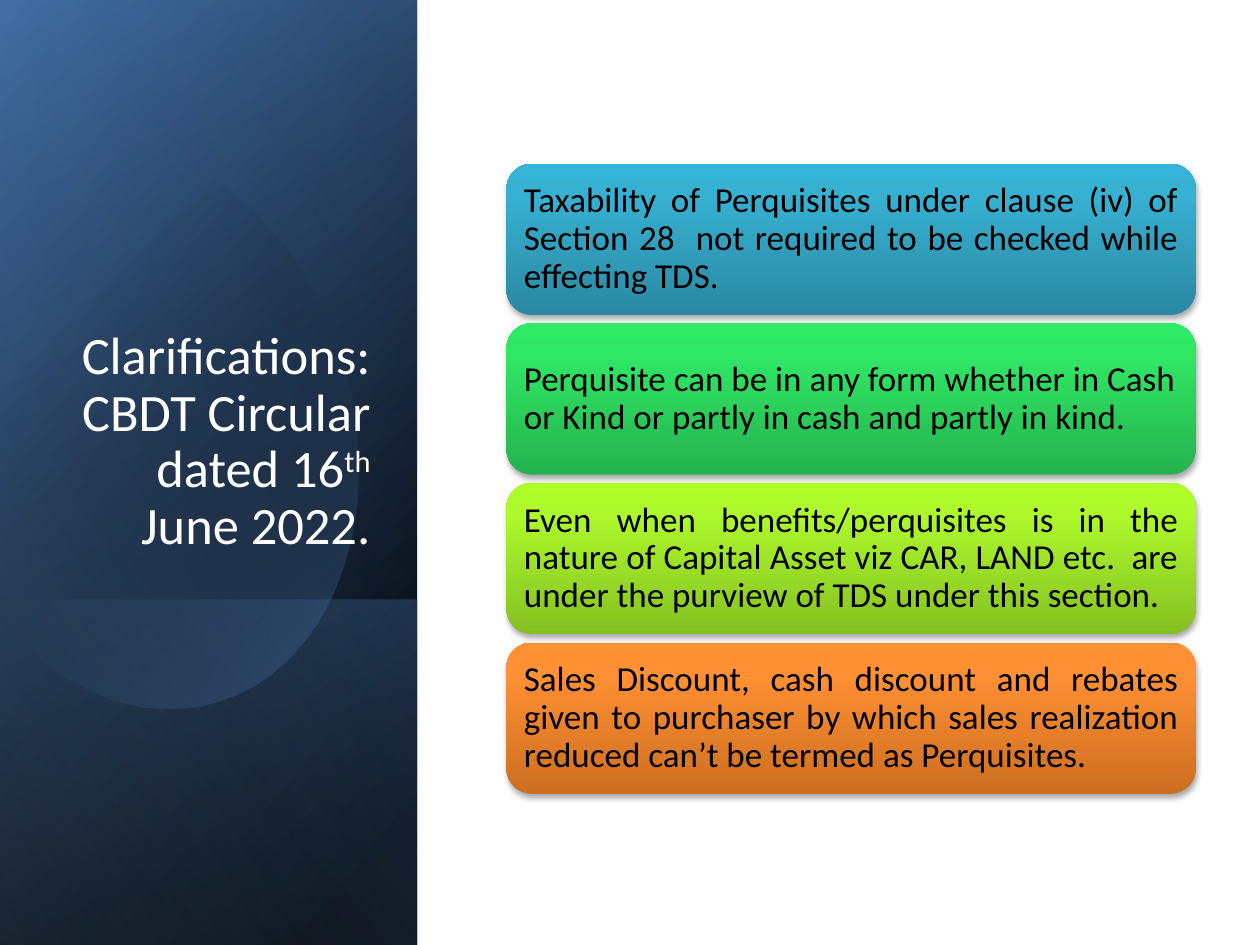
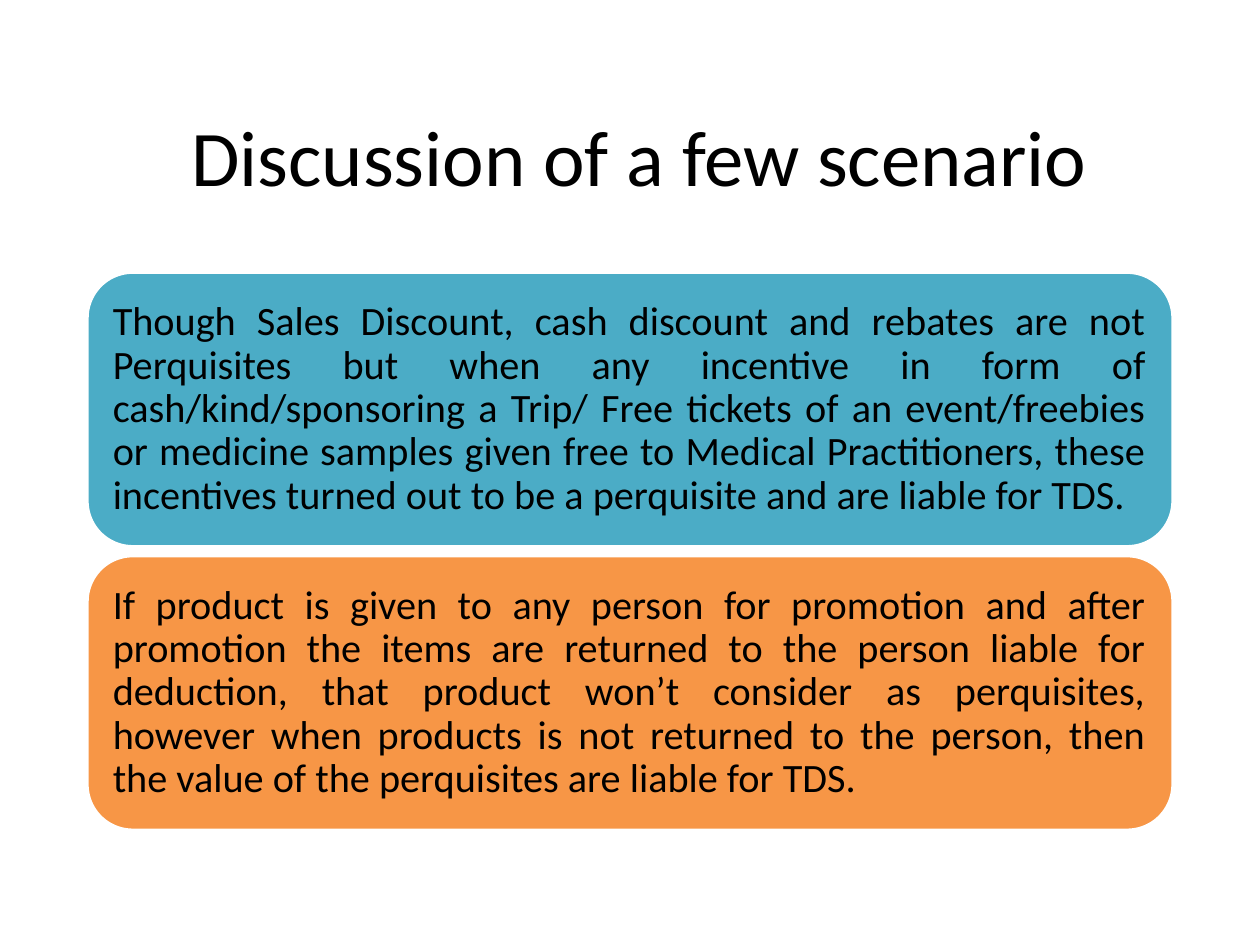
import dataclasses

import lxml.etree
import pptx
import pptx.dml.color
import pptx.enum.shapes
import pptx.enum.text
import pptx.oxml.ns
import pptx.util

ALIGN = pptx.enum.text.PP_ALIGN
ANCHOR = pptx.enum.text.MSO_ANCHOR
SHAPES = pptx.enum.shapes.MSO_SHAPE
qn = pptx.oxml.ns.qn

# The slide is a grid of 100 columns by 75 rows
CELL = pptx.util.Inches(0.1)


@dataclasses.dataclass(frozen=True)
class Theme:
    font: str = "Calibri"
    black: str = "000000"
    white: str = "FFFFFF"
    navy: str = "376092"
    blue: str = "4F81BD"
    pale_blue: str = "95B3D7"
    teal: str = "4BACC6"
    orange: str = "F79646"
    side_title_size: int = 30
    title_size: int = 45
    card_size: int = 20
    scenario_size: int = 23
    line_spacing: float = 0.9
    # Dark, middle and light tone of each clarification card
    card_tones: tuple = (
        ("2A88A2", "37B1D2", "34B4D6"),
        ("25B24E", "30E765", "2DEB64"),
        ("85C022", "ADF92C", "AFFE28"),
        ("CC6E20", "FF9034", "FF9136"),
    )


THEME = Theme()


@dataclasses.dataclass(frozen=True)
class Box:
    left: float
    top: float
    width: float
    height: float

    def emu(self):
        return [round(value * CELL) for value in dataclasses.astuple(self)]

    def inner(self, left, top, width, height):
        return Box(self.left + left, self.top + top, width, height)

    def rows(self, count, gap):
        height = (self.height - gap * (count - 1)) / count
        return [self.inner(0, i * (height + gap), self.width, height) for i in range(count)]


# Fills, effects and text
def add_color(parent, color, alpha):
    element = lxml.etree.SubElement(parent, qn("a:srgbClr"), val=color)
    if alpha < 100:
        lxml.etree.SubElement(element, qn("a:alpha"), val=str(alpha * 1000))


def set_gradient(shape, stops, angle):
    """Stops are (position, colour, opacity) in percent; the angle runs clockwise."""
    shape.fill.background()
    properties = shape._element.spPr
    gradient = lxml.etree.Element(qn("a:gradFill"), rotWithShape="1")
    stop_list = lxml.etree.SubElement(gradient, qn("a:gsLst"))
    for position, color, alpha in stops:
        stop = lxml.etree.SubElement(stop_list, qn("a:gs"), pos=str(position * 1000))
        add_color(stop, color, alpha)
    lxml.etree.SubElement(gradient, qn("a:lin"), ang=str(angle * 60000), scaled="0")
    properties.replace(properties.find(qn("a:noFill")), gradient)


def set_shadow(shape):
    effects = shape._element.spPr.find(qn("a:effectLst"))
    shadow = lxml.etree.SubElement(
        effects, qn("a:outerShdw"), blurRad=str(pptx.util.Pt(3.1)),
        dist=str(pptx.util.Pt(1.8)), dir="5400000", rotWithShape="0")
    add_color(shadow, THEME.black, 35)


def make_plain(shape):
    shape.shadow.inherit = False
    shape.line.fill.background()


def style_text(text_frame, size, color, align, anchor, spacing=1.0):
    text_frame.word_wrap = True
    text_frame.vertical_anchor = anchor
    for paragraph in text_frame.paragraphs:
        paragraph.alignment = align
        paragraph.line_spacing = spacing
        for run in paragraph.runs:
            run.font.name = THEME.font
            run.font.size = pptx.util.Pt(size)
            run.font.color.rgb = pptx.dml.color.RGBColor.from_string(color)


def add_card(slide, box, text, size, inset, align):
    card = slide.shapes.add_shape(SHAPES.ROUNDED_RECTANGLE, *box.emu())
    make_plain(card)
    frame = card.text_frame
    frame.margin_left = frame.margin_right = pptx.util.Inches(inset)
    frame.margin_top = frame.margin_bottom = pptx.util.Inches(inset)
    frame.text = text
    style_text(frame, size, THEME.black, align, ANCHOR.MIDDLE, THEME.line_spacing)
    return card


# Side panel: layered gradients and a soft blob
def add_layer(slide, box, stops, angle):
    """Fill the box with a mirrored rectangle turned a quarter."""
    turned = box.inner((box.width - box.height) / 2, (box.height - box.width) / 2,
                       box.height, box.width)
    layer = slide.shapes.add_shape(SHAPES.RECTANGLE, *turned.emu())
    make_plain(layer)
    layer.rotation = 90
    layer._element.spPr.xfrm.set("flipH", "1")
    set_gradient(layer, stops, angle)


def curve_points(start, control_1, control_2, end, steps=16):
    for step in range(1, steps + 1):
        t = step / steps
        weights = ((1 - t) ** 3, 3 * t * (1 - t) ** 2, 3 * t * t * (1 - t), t ** 3)
        yield tuple(sum(w * point[axis] for w, point in
                        zip(weights, (start, control_1, control_2, end)))
                    for axis in (0, 1))


def add_blob(slide, box):
    start = (9.6, 11.4)
    right_side = [((17.1, 12.2), (24.4, 19.2), (27.3, 29)),
                  ((30.7, 41.2), (26.2, 53.1), (17.1, 55.7)),
                  ((11.4, 57.4), (5.3, 55), (0.7, 50))]
    left_edge = [(-0.3, 48.8), (-2.5, 16.6), (-1.5, 15.4)]
    top_left = [((0.2, 13.7), (2.2, 12.5), (4.5, 11.8)),
                ((6.2, 11.3), (7.9, 11.2), start)]
    points = [start]
    for curve in right_side:
        points.extend(curve_points(points[-1], *curve))
    points.extend(left_edge)
    for curve in top_left:
        points.extend(curve_points(points[-1], *curve))
    corners = [(round((box.left + x) * CELL), round((box.top + y) * CELL)) for x, y in points]
    builder = slide.shapes.build_freeform(*corners[0])
    builder.add_line_segments(corners[1:], close=True)
    blob = builder.convert_to_shape()
    make_plain(blob)
    set_gradient(blob, [(29, THEME.black, 0), (100, THEME.blue, 43)], 45)


def add_side_panel(slide, box):
    add_layer(slide, box, [(8, THEME.black, 100), (100, THEME.navy, 100)], 50)
    add_layer(slide, box, [(0, THEME.black, 0), (99, THEME.blue, 46)], 30)
    foot = box.inner(0, 47.6, box.width, box.height - 47.6)
    add_layer(slide, foot, [(2, THEME.blue, 29), (100, THEME.black, 30)], 130)
    add_blob(slide, box)
    add_layer(slide, box, [(0, THEME.black, 0), (99, THEME.pale_blue, 11)], 120)

    title = slide.shapes.add_textbox(*box.inner(4.8, 18.4, 25.6, 26.2).emu())
    paragraph = title.text_frame.paragraphs[0]
    paragraph.text = " Clarifications:\vCBDT Circular dated 16"
    ordinal = paragraph.add_run()
    ordinal.text = "th"
    ordinal.font._element.set("baseline", "30000")
    paragraph.add_run().text = " June 2022."
    style_text(title.text_frame, THEME.side_title_size, THEME.white, ALIGN.RIGHT,
               ANCHOR.BOTTOM, THEME.line_spacing)


# Card stacks
def add_clarifications(slide, box):
    clarifications = [
        ("Taxability of Perquisites under clause (iv) of Section 28  not required to be "
         "checked while effecting TDS.", ALIGN.JUSTIFY),
        ("Perquisite can be in any form whether in Cash or Kind or partly in cash and "
         "partly in kind.", ALIGN.LEFT),
        ("Even when benefits/perquisites is in the nature of Capital Asset viz CAR, LAND "
         "etc.  are under the purview of TDS under this section.", ALIGN.JUSTIFY),
        ("Sales Discount, cash discount and rebates given to purchaser by which sales "
         "realization reduced can’t be termed as Perquisites.", ALIGN.JUSTIFY),
    ]
    rows = box.rows(len(clarifications), gap=0.67)
    for row, (text, align), tones in zip(rows, clarifications, THEME.card_tones):
        card = add_card(slide, row, text, THEME.card_size, 0.08, align)
        set_gradient(card, [(position, tone, 100)
                            for position, tone in zip((0, 80, 100), tones)], 270)
        set_shadow(card)


def add_scenarios(slide, box):
    scenarios = [
        ("Though Sales Discount, cash discount and rebates are not Perquisites but when any "
         "incentive in form of cash/kind/sponsoring a Trip/ Free tickets of an "
         "event/freebies or medicine samples given free to Medical Practitioners, these "
         "incentives turned out to be a perquisite and are liable for TDS.", THEME.teal),
        ("If product is given to any person for promotion and after promotion the items are "
         "returned to the person liable for deduction, that product won’t consider as "
         "perquisites, however when products is not returned to the person, then the value "
         "of the perquisites are liable for TDS.", THEME.orange),
    ]
    for row, (text, color) in zip(box.rows(len(scenarios), gap=0.7), scenarios):
        card = add_card(slide, row, text, THEME.scenario_size, 0.1, ALIGN.JUSTIFY)
        card.fill.solid()
        card.fill.fore_color.rgb = pptx.dml.color.RGBColor.from_string(color)
        card.line.color.rgb = pptx.dml.color.RGBColor.from_string(THEME.white)
        card.line.width = pptx.util.Pt(2)


def add_title(slide, box, text):
    title = slide.shapes.add_textbox(*box.emu())
    title.text_frame.text = text
    style_text(title.text_frame, THEME.title_size, THEME.black, ALIGN.CENTER, ANCHOR.MIDDLE)


# Slides
def build_clarifications_slide(slide):
    add_side_panel(slide, Box(0, 0, 33.1, 75))
    add_clarifications(slide, Box(40.2, 13, 54.7, 50))


def build_scenarios_slide(slide):
    add_title(slide, Box(6.9, 6.1, 86.2, 12.4), " Discussion of a few scenario")
    add_scenarios(slide, Box(6.9, 21.6, 86.2, 44.3))


def main():
    presentation = pptx.Presentation()
    presentation.slide_width = 100 * CELL
    presentation.slide_height = 75 * CELL
    blank = presentation.slide_layouts[6]
    for build in (build_clarifications_slide, build_scenarios_slide):
        build(presentation.slides.add_slide(blank))
    presentation.save("out.pptx")


if __name__ == "__main__":
    main()
